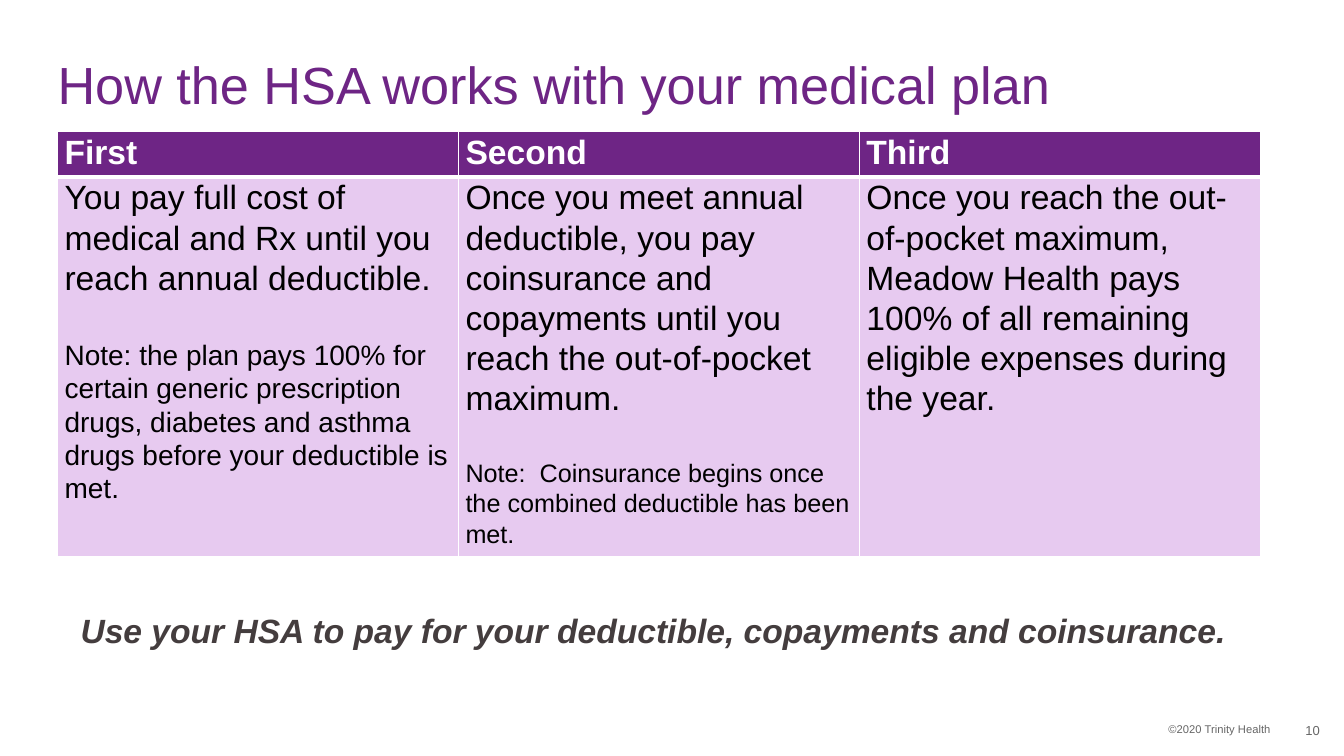
"""Build the slide on how the HSA works with the medical plan."""
import lxml.etree
import pptx
import pptx.dml.color
import pptx.enum.text
import pptx.oxml
import pptx.oxml.ns
import pptx.util

COLORS = {"purple": "6E2585", "lilac": "E7CAF0", "white": "FFFFFF",
          "black": "000000", "gray": "666666", "charcoal": "443D3E"}
ALIGN = pptx.enum.text.PP_ALIGN
ANCHOR = pptx.enum.text.MSO_ANCHOR

prs = pptx.Presentation()
prs.slide_width = pptx.util.Inches(13.33)
prs.slide_height = pptx.util.Inches(7.5)
s = prs.slides.add_slide(prs.slide_layouts[5])


def place(left, top, width, height):
    """Turn percentages of the slide into lengths."""
    w, h = prs.slide_width, prs.slide_height
    return [int(share * side / 100) for share, side in
            ((left, w), (top, h), (width, w), (height, h))]


def style(p, size, color, bold=False, italic=False):
    """Set the font of a paragraph."""
    p.font.name = "Arial"
    p.font.size = pptx.util.Pt(size)
    p.font.bold = bold
    p.font.italic = italic
    p.font.color.rgb = pptx.dml.color.RGBColor.from_string(COLORS[color])


title = s.shapes.title
title.left, title.top, title.width, title.height = place(4.28, 6.67, 90, 9.73)
tf = title.text_frame
tf.text = "How the HSA works with your medical plan"
tf.auto_size = pptx.enum.text.MSO_AUTO_SIZE.NONE
tf.vertical_anchor = ANCHOR.MIDDLE
tf.margin_left = tf.margin_right = tf.margin_top = tf.margin_bottom = 0
p = tf.paragraphs[0]
p.alignment = ALIGN.LEFT
p.line_spacing = 0.9
style(p, 37.3, "purple")

stages = [
    ("First", [
        ("You pay full cost of medical and Rx until you reach annual deductible.", 24),
        ("Note: the plan pays 100% for certain generic prescription drugs, "
         "diabetes and asthma drugs before your deductible is met.", 20)]),
    ("Second", [
        ("Once you meet annual deductible, you pay coinsurance and copayments "
         "until you reach the out-of-pocket maximum.", 24),
        ("Note:  Coinsurance begins once the combined deductible has been met.", 18)]),
    ("Third", [
        ("Once you reach the out-of-pocket maximum, Meadow Health pays 100% "
         "of all remaining eligible expenses during the year.", 24)]),
]
header_share, body_share = 6, 50.27
table = s.shapes.add_table(
    2, len(stages), *place(4.28, 17.4, 89.5, header_share + body_share)).table
for row, share in zip(table.rows, (header_share, body_share)):
    row.height = int(prs.slide_height * share / 100)

for col, (heading, body) in enumerate(stages):
    rows = [([(heading, 24)], "purple", "white"), (body, "lilac", "black")]
    for row, (texts, fill, color) in enumerate(rows):
        cell = table.cell(row, col)
        cell.margin_left = cell.margin_right = pptx.util.Inches(0.07)
        cell.margin_top = cell.margin_bottom = 0
        tcPr = cell._tc.get_or_add_tcPr()
        for side in "LRTB":
            thick = side == "TB"[1 - row]
            ln = lxml.etree.SubElement(tcPr, pptx.oxml.ns.qn(f"a:ln{side}"),
                                       w=str(pptx.util.Pt(3 if thick else 1)))
            solid = lxml.etree.SubElement(ln, pptx.oxml.ns.qn("a:solidFill"))
            lxml.etree.SubElement(solid, pptx.oxml.ns.qn("a:srgbClr"), val=COLORS["white"])
        cell.fill.solid()
        cell.fill.fore_color.rgb = pptx.dml.color.RGBColor.from_string(COLORS[fill])
        tf = cell.text_frame
        for i, (text, size) in enumerate(texts):
            p = tf.add_paragraph() if i else tf.paragraphs[0]
            p.text = text
            p.line_spacing = 1.07
            if i:
                p.space_before = pptx.util.Pt(29)
            style(p, size, color, bold=row == 0)

tf = s.shapes.add_textbox(*place(5.25, 81.47, 87.55, 5.33)).text_frame
tf.word_wrap = False
p = tf.paragraphs[0]
p.text = "Use your HSA to pay for your deductible, copayments and coinsurance."
p.line_spacing = pptx.util.Pt(21)
p.space_after = pptx.util.Pt(6)
style(p, 24, "charcoal", bold=True, italic=True)

footers = [("©2020 Trinity Health", 8, (53.34, 94.93, 41.94, 3.6), ANCHOR.TOP, 0.1),
           ("10", 9.3, (93.77, 94, 4.43, 5.33), ANCHOR.MIDDLE, 0)]
for text, size, area, anchor, inset in footers:
    tf = s.shapes.add_textbox(*place(*area)).text_frame
    tf.word_wrap = True
    tf.vertical_anchor = anchor
    tf.margin_right = pptx.util.Inches(inset)
    p = tf.paragraphs[0]
    p.text = text
    p.alignment = ALIGN.RIGHT
    style(p, size, "gray")

prs.save("out.pptx")
